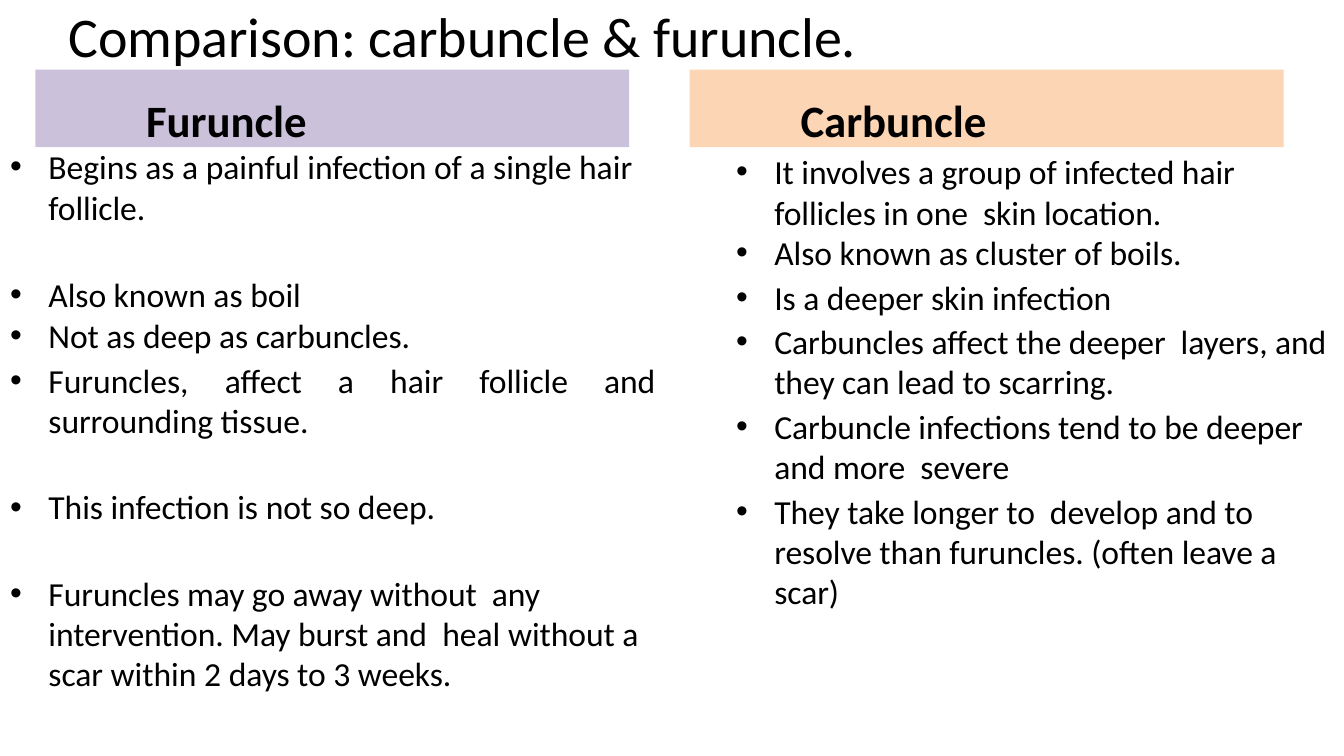
from pptx import Presentation
from pptx.dml.color import RGBColor
from pptx.enum.shapes import MSO_SHAPE
from pptx.enum.text import MSO_ANCHOR, PP_ALIGN
from pptx.oxml.xmlchemy import OxmlElement
from pptx.util import Inches, Pt

RECTANGLE = MSO_SHAPE.RECTANGLE
TOP, MIDDLE = MSO_ANCHOR.TOP, MSO_ANCHOR.MIDDLE
LEFT, JUSTIFY = PP_ALIGN.LEFT, PP_ALIGN.JUSTIFY

COLORS = {"text": "000000", "furuncle": "CCC1DA", "carbuncle": "FCD5B5"}
FONT = "Calibri"
TIGHT = -5  # hundredths of a point between letters

TITLE = "|Comparison: carbuncle & furuncle."
# Each bullet: text, space before in points, alignment.
# A bar switches between normal and tight letter spacing.
FURUNCLE = [
    ("Begins as a |painful infection of |a |single |hair  |follicle.", 4.6, LEFT),
    ("|Also |known as |boil", 33.9, LEFT),
    ("|Not as deep |as |carbuncles.", 0, LEFT),
    ("Furuncles, |affect |a hair |follicle |and |surrounding |tissue.", 3.5, JUSTIFY),
    ("|This infection |is |not so |deep.", 32.8, LEFT),
    ("|Furuncles may go away without  any intervention. May burst |and  heal "
     "|without |a |scar |within 2 |days to |3 |weeks.", 32.8, LEFT),
]
CARBUNCLE = [
    ("|It involves a group of infected hair follicles in one  skin location.", 4, LEFT),
    ("|Also known as cluster of boils.", 0.1, LEFT),
    ("|Is a deeper skin infection", 3, LEFT),
    ("|Carbuncles affect the deeper  layers, and they can lead to scarring.", 3, LEFT),
    ("|Carbuncle infections tend to be deeper and more  severe", 3, LEFT),
    ("|They take longer to  develop and to resolve than furuncles. "
     "(often leave a scar)", 3, LEFT),
]
# Heading, colour, heading left, body box, body top inset, bullets
COLUMNS = [
    ("|Furuncle", "furuncle", 0.35, (0.09, 1.39, 6.41, 5.54), 0.06, FURUNCLE),
    ("|Carbuncle", "carbuncle", 6.84, (7.29, 1.45, 5.96, 4.67), 0.05, CARBUNCLE),
]
HEADING_TOP, HEADING_WIDTH, HEADING_HEIGHT = 0.69, 5.89, 0.77


def set_frame(shape, top_inset, anchor=TOP):
    frame = shape.text_frame
    frame.word_wrap = True
    frame.margin_left = frame.margin_right = frame.margin_bottom = 0
    frame.margin_top = Inches(top_inset)
    frame.vertical_anchor = anchor
    return frame


def write(paragraph, text, size, before, margin, hanging=0, bold=False,
          alignment=LEFT):
    paragraph.alignment = alignment
    paragraph.space_before = Pt(before)
    properties = paragraph._p.get_or_add_pPr()
    properties.set("marL", str(Inches(margin)))
    properties.set("indent", str(-Inches(hanging)))
    for index, part in enumerate(text.split("|")):
        if not part:
            continue
        run = paragraph.add_run()
        run.text = part
        run.font.name = FONT
        run.font.size = Pt(size)
        run.font.bold = bold
        run.font.color.rgb = RGBColor.from_string(COLORS["text"])
        if index % 2:
            run._r.get_or_add_rPr().set("spc", str(TIGHT))


def add_bullet(paragraph):
    properties = paragraph._p.get_or_add_pPr()
    font = OxmlElement("a:buFont")
    font.set("typeface", "Arial")
    character = OxmlElement("a:buChar")
    character.set("char", "•")
    properties.extend([font, character])


def add_box(slide, box):
    return slide.shapes.add_textbox(*map(Inches, box))


def add_column(slide, heading, color, left, box, inset, bullets):
    bar = slide.shapes.add_shape(RECTANGLE, *map(
        Inches, (left, HEADING_TOP, HEADING_WIDTH, HEADING_HEIGHT)))
    bar.shadow.inherit = False
    bar.fill.solid()
    bar.fill.fore_color.rgb = RGBColor.from_string(COLORS[color])
    bar.line.fill.background()
    write(set_frame(bar, 0.23).paragraphs[0], heading, 32, 16.4, 1.1, bold=True)

    frame = set_frame(add_box(slide, box), inset)
    for index, (text, before, alignment) in enumerate(bullets):
        paragraph = frame.add_paragraph() if index else frame.paragraphs[0]
        write(paragraph, text, 24, before, 0.39, 0.38, alignment=alignment)
        add_bullet(paragraph)


def main():
    presentation = Presentation()
    presentation.slide_width, presentation.slide_height = Inches(13.33), Inches(7.5)
    slide = presentation.slides.add_slide(presentation.slide_layouts[6])
    title = set_frame(add_box(slide, (0.67, 0, 11.66, 0.69)), 0.01, MIDDLE)
    write(title.paragraphs[0], TITLE, 40, 0.9, 0.01)
    for column in COLUMNS:
        add_column(slide, *column)
    presentation.save("out.pptx")


if __name__ == "__main__":
    main()
